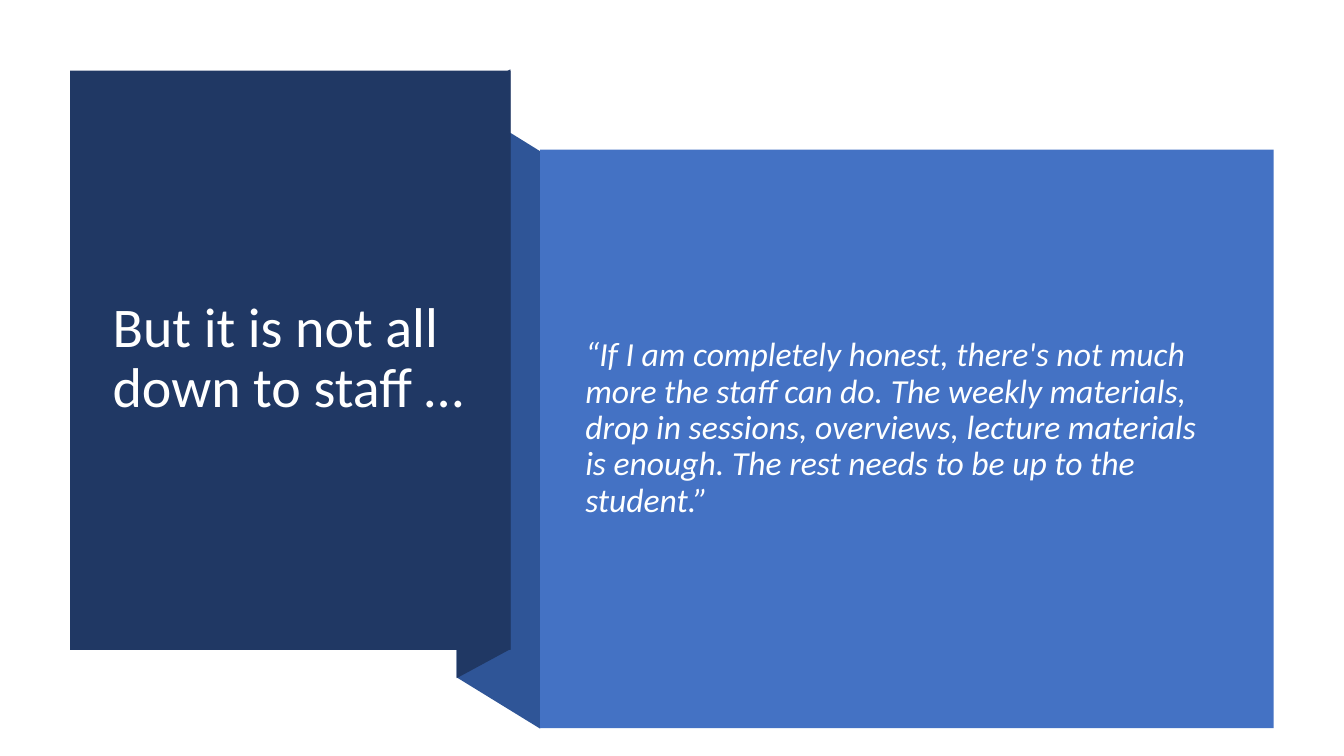
from pptx import Presentation
from pptx.dml.color import RGBColor
from pptx.enum import shapes, text
from pptx.util import Cm, Pt

NAVY = RGBColor(0x20, 0x38, 0x64)
MID_BLUE = RGBColor(0x2F, 0x55, 0x97)
BLUE = RGBColor(0x44, 0x72, 0xC4)
WHITE = RGBColor(0xFF, 0xFF, 0xFF)
OFF_WHITE = RGBColor(0xFE, 0xFF, 0xFF)

# Vertical edges of the folded ribbon, in cm
FOLD_LEFT, PANEL_RIGHT, QUOTE_LEFT = 11.51, 12.86, 13.61


def paint(shape, color):
    shape.shadow.inherit = False
    shape.fill.solid()
    shape.fill.fore_color.rgb = color
    shape.line.fill.background()


def add_panel(slide, left, top, width, height, color):
    panel = slide.shapes.add_shape(
        shapes.MSO_SHAPE.RECTANGLE, Cm(left), Cm(top), Cm(width), Cm(height))
    paint(panel, color)


def add_fold(slide, corners, color):
    start, *rest = [(Cm(x), Cm(y)) for x, y in corners]
    outline = slide.shapes.build_freeform(*start)
    outline.add_line_segments(rest, close=True)
    paint(outline.convert_to_shape(), color)


def add_words(slide, left, top, width, height, words, size, color, italic=False):
    box = slide.shapes.add_textbox(Cm(left), Cm(top), Cm(width), Cm(height))
    frame = box.text_frame
    frame.word_wrap = True
    frame.vertical_anchor = text.MSO_ANCHOR.MIDDLE
    paragraph = frame.paragraphs[0]
    paragraph.text = words
    paragraph.line_spacing = 0.9
    font = paragraph.font
    font.name = "Calibri"
    font.size = Pt(size)
    font.italic = italic
    font.color.rgb = color


def main():
    deck = Presentation()
    deck.slide_width, deck.slide_height = Cm(33.87), Cm(19.05)
    slide = deck.slides.add_slide(deck.slide_layouts[6])

    # Ribbon folding from the heading panel to the quote panel
    add_fold(slide, [(QUOTE_LEFT, 18.36), (FOLD_LEFT, 17.07),
                     (FOLD_LEFT, 2.51), (QUOTE_LEFT, 3.81)], MID_BLUE)
    add_fold(slide, [(PANEL_RIGHT, 16.36), (FOLD_LEFT, 17.09),
                     (FOLD_LEFT, 2.49), (PANEL_RIGHT, 1.75)], NAVY)

    # Heading
    add_panel(slide, 1.77, 1.78, 11.1, 14.6, NAVY)
    add_words(slide, 2.59, 2.72, 9.42, 12.67,
              "But it is not all down to staff …", 40, WHITE)

    # Student quote
    add_panel(slide, QUOTE_LEFT, 3.77, 18.49, 14.58, BLUE)
    add_words(slide, 14.5, 4.78, 16.54, 12.04,
              "“If I am completely honest, there's not much more the staff can do. "
              "The weekly materials, drop in sessions, overviews, lecture materials "
              "is enough. The rest needs to be up to the student.”",
              24, OFF_WHITE, italic=True)

    deck.save("out.pptx")


if __name__ == "__main__":
    main()
